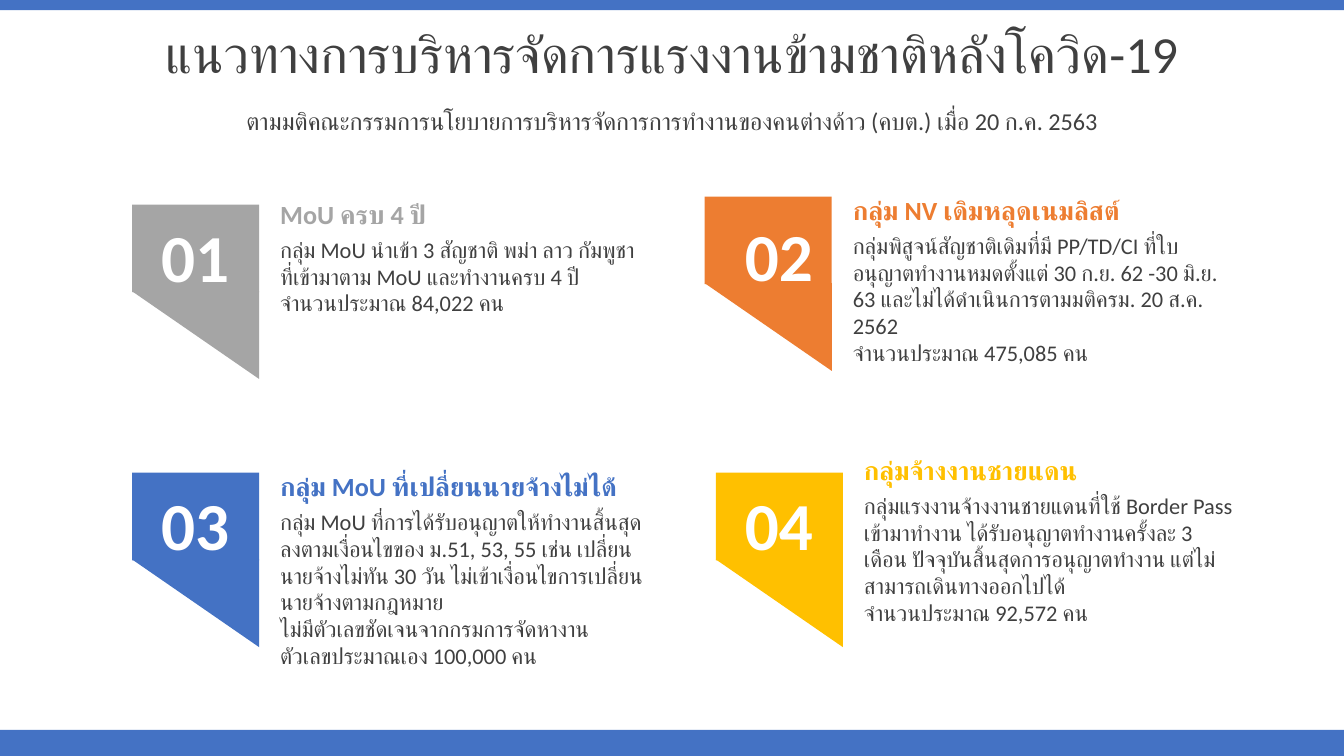
from pptx import Presentation
from pptx.dml.color import RGBColor
from pptx.enum.shapes import MSO_SHAPE as Shape
from pptx.enum.text import MSO_ANCHOR as Anchor, PP_ALIGN as Align
from pptx.oxml.ns import qn
from pptx.util import Inches, Pt
from lxml import etree

BLUE = RGBColor(0x44, 0x72, 0xC4)
ORANGE = RGBColor(0xED, 0x7D, 0x31)
GRAY = RGBColor(0xA5, 0xA5, 0xA5)
GOLD = RGBColor(0xFF, 0xC0, 0x00)
DARK = RGBColor(0x40, 0x40, 0x40)
WHITE = RGBColor(0xFF, 0xFF, 0xFF)

FONT = "Calibri"
SLIDE_WIDTH, SLIDE_HEIGHT = 13.33, 7.5
BADGE_WIDTH, BADGE_HEIGHT = 1.26, 0.87
TEXT_OFFSET, TEXT_WIDTH = 1.37, 3.88

# number, colour, badge (left, top), number (left, top), heading top, heading, body height, body
GROUPS = [
    ("01", GRAY, (1.31, 2.03), (1.42, 2.09), 1.92, "MoU ครบ 4 ปี", 1.61,
     ["กลุ่ม MoU นำเข้า 3 สัญชาติ พม่า ลาว กัมพูชา ที่เข้ามาตาม MoU และทำงานครบ 4 ปี",
      "จำนวนประมาณ 84,022 คน"]),
    ("02", ORANGE, (6.99, 1.95), (7.21, 2.08), 1.88, "กลุ่ม NV เดิมหลุดเนมลิสต์", 1.99,
     ["กลุ่มพิสูจน์สัญชาติเดิมที่มี PP/TD/CI ที่ใบอนุญาตทำงานหมดตั้งแต่ 30 ก.ย. 62 -30 มิ.ย. 63 "
      "และไม่ได้ดำเนินการตามมติครม. 20 ส.ค. 2562",
      "จำนวนประมาณ 475,085 คน"]),
    ("03", BLUE, (1.31, 4.69), (1.42, 4.75), 4.62, "กลุ่ม MoU ที่เปลี่ยนนายจ้างไม่ได้", 2.36,
     ["กลุ่ม MoU ที่การได้รับอนุญาตให้ทำงานสิ้นสุดลงตามเงื่อนไขของ ม.51, 53, 55 เช่น "
      "เปลี่ยนนายจ้างไม่ทัน 30 วัน ไม่เข้าเงื่อนไขการเปลี่ยนนายจ้างตามกฎหมาย",
      "ไม่มีตัวเลขชัดเจนจากกรมการจัดหางาน",
      "ตัวเลขประมาณเอง 100,000 คน"]),
    ("04", GOLD, (7.1, 4.69), (7.21, 4.75), 4.46, "กลุ่มจ้างงานชายแดน", 1.99,
     ["กลุ่มแรงงานจ้างงานชายแดนที่ใช้ Border Pass เข้ามาทำงาน ได้รับอนุญาตทำงานครั้งละ 3 เดือน "
      "ปัจจุบันสิ้นสุดการอนุญาตทำงาน แต่ไม่สามารถเดินทางออกไปได้",
      "จำนวนประมาณ 92,572 คน"]),
]


def add_block(page, kind, left, top, width, height, color):
    block = page.shapes.add_shape(kind, Inches(left), Inches(top), Inches(width), Inches(height))
    block.shadow.inherit = False
    block.fill.solid()
    block.fill.fore_color.rgb = color
    block.line.fill.background()
    return block


def add_text(page, left, top, width, height, lines, size, color, bold=False, align=Align.LEFT):
    box = page.shapes.add_textbox(Inches(left), Inches(top), Inches(width), Inches(height))
    frame = box.text_frame
    frame.word_wrap = True
    frame.text = "\n".join(lines)
    for para in frame.paragraphs:
        para.alignment = align
        for span in para.runs:
            font = span.font
            font.name, font.size, font.bold = FONT, Pt(size), bold
            font.color.rgb = color
            # Thai letters take the complex-script typeface
            etree.SubElement(span._r.get_or_add_rPr(), qn("a:cs"), typeface=FONT)
    return box


def add_title(page, top, height, text, size):
    box = add_text(page, 0, top, SLIDE_WIDTH, height, [text], size, DARK, align=Align.CENTER)
    box.text_frame.vertical_anchor = Anchor.MIDDLE
    para = box.text_frame.paragraphs[0]
    para.line_spacing = 0.7
    para.space_before = Pt(10)


def add_badge(page, left, top, color):
    """Draw a square flag with a slanted tail pointing to the lower right."""
    add_block(page, Shape.RECTANGLE, left, top, BADGE_WIDTH, BADGE_HEIGHT, color)
    tail = add_block(page, Shape.ISOSCELES_TRIANGLE, left, top + BADGE_HEIGHT - 0.01,
                     BADGE_WIDTH, BADGE_HEIGHT, color)
    tail.adjustments[0] = 0
    tail.rotation = 180


def add_group(page, number, color, badge, label, heading_top, heading, body_height, body):
    left, top = badge
    text_left = left + TEXT_OFFSET
    add_badge(page, left, top, color)
    add_text(page, text_left, heading_top + 0.37, TEXT_WIDTH, body_height, body, 16, DARK)
    add_text(page, text_left, heading_top, TEXT_WIDTH, 0.54, [heading], 18.7, color, bold=True)
    add_text(page, *label, 1.03, 0.91, [number], 48, WHITE, bold=True, align=Align.CENTER)


def main():
    deck = Presentation()
    deck.slide_width, deck.slide_height = Inches(SLIDE_WIDTH), Inches(SLIDE_HEIGHT)
    page = deck.slides.add_slide(deck.slide_layouts[6])
    for top, height in ((7.24, 0.26), (0, 0.1)):
        add_block(page, Shape.RECTANGLE, 0, top, SLIDE_WIDTH, height, BLUE)
    add_title(page, 0.18, 0.84, "แนวทางการบริหารจัดการแรงงานข้ามชาติหลังโควิด-19", 37.2)
    add_title(page, 1.02, 0.42, "ตามมติคณะกรรมการนโยบายการบริหารจัดการการทำงานของคนต่างด้าว (คบต.) "
              "เมื่อ 20 ก.ค. 2563", 17.3)
    for group in GROUPS:
        add_group(page, *group)
    deck.save("out.pptx")


if __name__ == "__main__":
    main()
